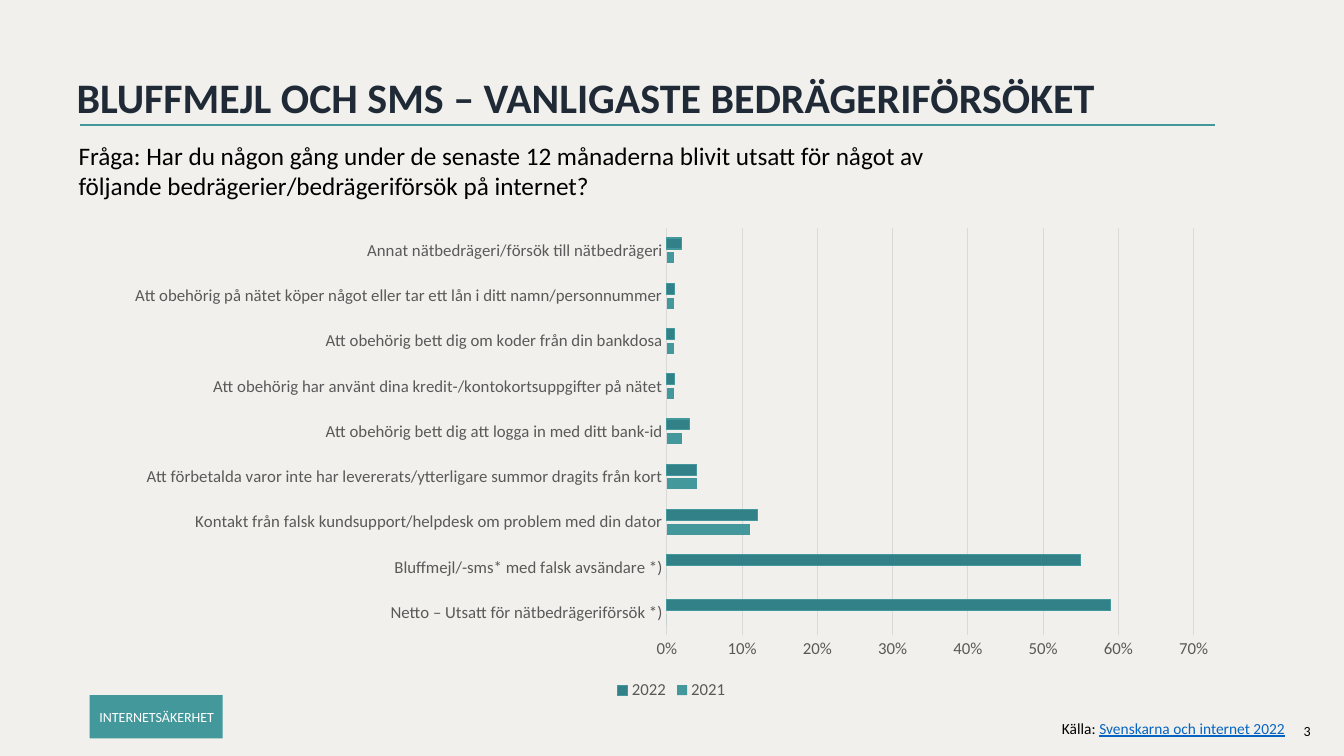
from pptx import Presentation
from pptx.chart.data import CategoryChartData
from pptx.dml.color import RGBColor
from pptx.enum.chart import XL_CHART_TYPE as ChartType, XL_LEGEND_POSITION as LegendSpot, XL_TICK_MARK as Tick
from pptx.enum.shapes import MSO_CONNECTOR as Connector, MSO_SHAPE as Shape
from pptx.enum.text import MSO_ANCHOR as Anchor, PP_ALIGN as Align
from pptx.oxml.ns import qn
from pptx.util import Pt
from lxml.etree import SubElement

COLORS = {
    "page": "F1F0EC", "teal": "43989B", "deep": "328189", "navy": "1F2A36",
    "black": "000000", "white": "FFFFFF", "gray": "595959", "grid": "D9D9D9", "link": "0563C1",
}
ANSWERS = [
    ("Netto – Utsatt för nätbedrägeriförsök *)", 0, 0.59),
    ("Bluffmejl/-sms* med falsk avsändare *)", 0, 0.55),
    ("Kontakt från falsk kundsupport/helpdesk om problem med din dator", 0.11, 0.12),
    ("Att förbetalda varor inte har levererats/ytterligare summor dragits från kort", 0.04, 0.04),
    ("Att obehörig bett dig att logga in med ditt bank-id", 0.02, 0.03),
    ("Att obehörig har använt dina kredit-/kontokortsuppgifter på nätet", 0.01, 0.01),
    ("Att obehörig bett dig om koder från din bankdosa", 0.01, 0.01),
    ("Att obehörig på nätet köper något eller tar ett lån i ditt namn/personnummer", 0.01, 0.01),
    ("Annat nätbedrägeri/försök till nätbedrägeri", 0.01, 0.02),
]


def color(name):
    """Return the named colour."""
    return RGBColor.from_string(COLORS[name])


class Page:
    """Hold the style and the current slide."""

    def __init__(self, deck, font="Calibri"):
        """Add a title-only slide with a plain background."""
        self.font = font
        self.slide = deck.slides.add_slide(deck.slide_layouts[5])
        self.shapes = self.slide.shapes
        fill = self.slide.background.fill
        fill.solid()
        fill.fore_color.rgb = color("page")

    def style(self, font, size, tone):
        """Set typeface, size and colour."""
        font.name, font.size = self.font, Pt(size)
        font.color.rgb = color(tone)

    def add_span(self, para, text, size, tone, bold=False, underline=False):
        """Add one formatted run."""
        span = para.add_run()
        span.text = text
        self.style(span.font, size, tone)
        span.font.bold, span.font.underline = bold, underline

    def title(self, text, box):
        """Place and fill the title."""
        title = self.shapes.title
        title.left, title.top, title.width, title.height = map(Pt, box)
        frame = title.text_frame
        frame.vertical_anchor = Anchor.MIDDLE
        para = frame.paragraphs[0]
        para.alignment, para.line_spacing = Align.LEFT, 0.9
        self.add_span(para, text, 30, "navy", bold=True)

    def text(self, box, size, spans, align=Align.LEFT):
        """Add a wrapped text box from (text, colour, underline) spans."""
        frame = self.shapes.add_textbox(*map(Pt, box)).text_frame
        frame.word_wrap = True
        para = frame.paragraphs[0]
        para.alignment = align
        for text, tone, underline in spans:
            self.add_span(para, text, size, tone, underline=underline)

    def rule(self, left, right, top):
        """Add a horizontal line."""
        line = self.shapes.add_connector(Connector.STRAIGHT, Pt(left), Pt(top), Pt(right), Pt(top))
        line.line.color.rgb, line.line.width = color("teal"), Pt(1.5)
        SubElement(line.element.spPr, qn("a:effectLst"))

    def tag(self, text, box):
        """Add a filled label."""
        tag = self.shapes.add_shape(Shape.RECTANGLE, *map(Pt, box))
        tag.shadow.inherit = False
        tag.fill.solid()
        tag.fill.fore_color.rgb = color("teal")
        tag.line.fill.background()
        frame = tag.text_frame
        frame.word_wrap, frame.vertical_anchor = False, Anchor.MIDDLE
        frame.margin_left, frame.margin_right = Pt(7), Pt(3)
        para = frame.paragraphs[0]
        para.alignment = Align.LEFT
        self.add_span(para, text, 10, "white")

    def bars(self, answers, box):
        """Add the clustered bar chart."""
        data = CategoryChartData(number_format="0%")
        data.categories, older, newer = zip(*answers)
        data.add_series("2021", older)
        data.add_series("2022", newer)
        chart = self.shapes.add_chart(ChartType.BAR_CLUSTERED, *map(Pt, box), data).chart
        self.style(chart.font, 12, "gray")
        chart.has_title, chart.has_legend = False, True
        chart.legend.position, chart.legend.include_in_layout = LegendSpot.BOTTOM, False
        self.style(chart.legend.font, 12, "gray")
        plot = chart.plots[0]
        plot.gap_width, plot.overlap, plot.vary_by_categories = 182, -30, False
        for series, tone in zip(plot.series, ("teal", "deep")):
            series.format.fill.solid()
            series.format.fill.fore_color.rgb = color(tone)
        outline = plot.series[1].format.line
        outline.color.rgb, outline.width = color("teal"), Pt(0.75)
        values = chart.value_axis
        values.minimum_scale, values.maximum_scale, values.major_unit = 0, 0.7, 0.1
        values.tick_labels.number_format = "0%"
        values.tick_labels.number_format_is_linked = False
        values.format.line.fill.background()
        for axis in (values, chart.category_axis):
            axis.major_tick_mark = axis.minor_tick_mark = Tick.NONE
            self.style(axis.tick_labels.font, 12, "gray")
        for line in (values.major_gridlines.format.line, chart.category_axis.format.line):
            line.color.rgb, line.width = color("grid"), Pt(0.75)


def main():
    """Build and save the slide."""
    deck = Presentation()
    deck.slide_width, deck.slide_height = Pt(960), Pt(540)
    page = Page(deck)
    page.text((924, 512.5, 29, 19.5), 10, [("3", "black", False)])
    page.rule(57, 868, 89.5)
    page.title("BLUFFMEJL OCH SMS – VANLIGASTE BEDRÄGERIFÖRSÖKET", (47.5, 49, 828, 44.5))
    page.tag("INTERNETSÄKERHET", (64, 496.5, 95, 31))
    question = ("Fråga: Har du någon gång under de senaste 12 månaderna blivit utsatt för något av "
                "följande bedrägerier/bedrägeriförsök på internet?")
    page.text((49, 96.5, 652, 51), 18, [(question, "black", False)])
    page.bars(ANSWERS, (80.5, 156, 798.5, 347))
    source = [("Källa: ", "black", False), ("Svenskarna och internet 2022", "link", True)]
    page.text((708, 510, 217, 21), 11, source, Align.RIGHT)
    deck.save("out.pptx")


if __name__ == "__main__":
    main()
